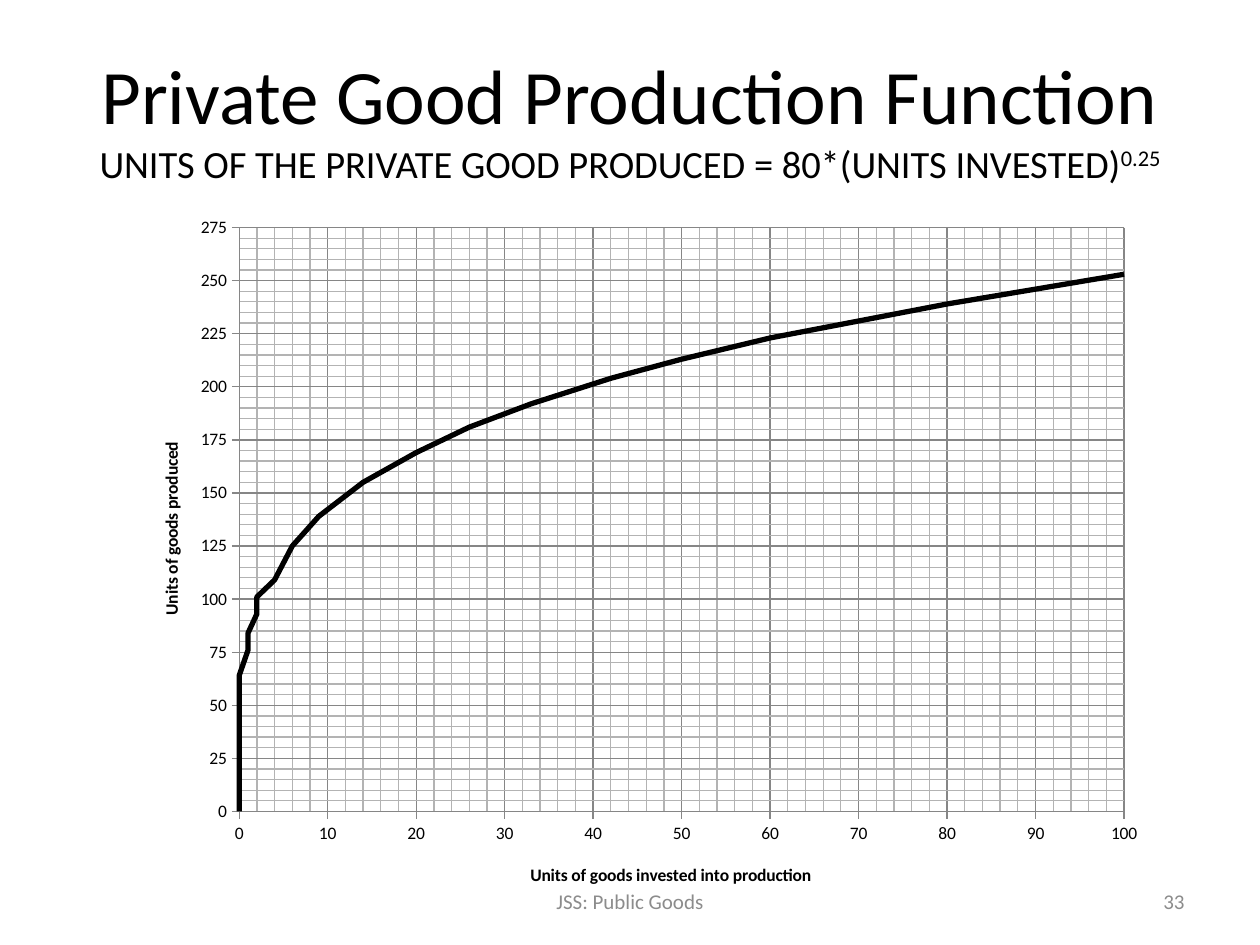
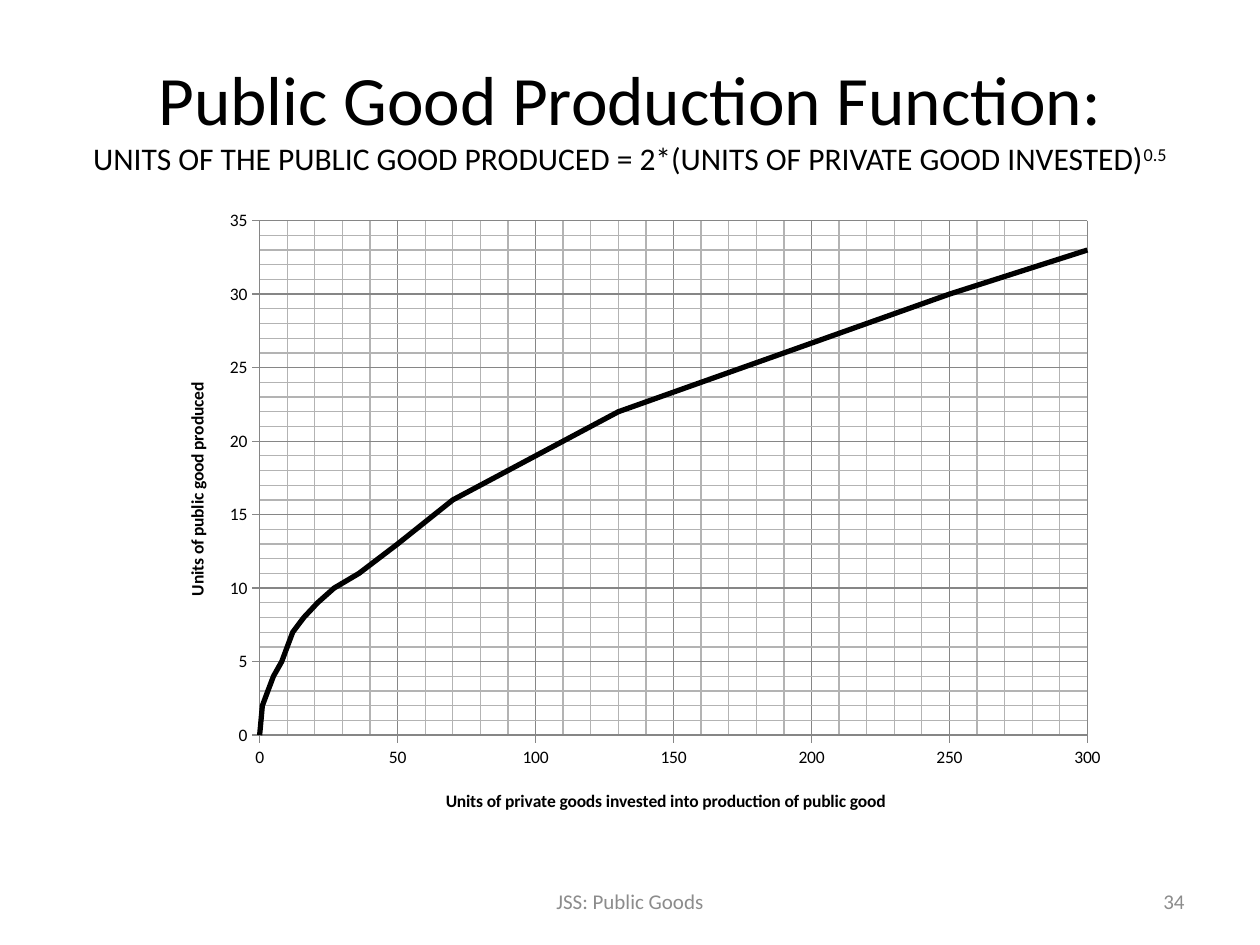
from lxml import etree
from pptx import Presentation
from pptx.chart.data import XyChartData
from pptx.dml.color import RGBColor
from pptx.enum.chart import XL_CHART_TYPE as ChartType, XL_TICK_MARK as TickMark
from pptx.enum.text import MSO_ANCHOR as Anchor, PP_ALIGN as Align
from pptx.oxml.ns import qn
from pptx.util import Inches, Pt

COLUMNS, ROWS = 120, 90  # grid over the whole slide
BLACK, FOOTER_GRAY = "000000", "8C8C8C"
MAJOR_GRAY, MINOR_GRAY = "868686", "B3B3B3"
GRID_WIDTH = Pt(0.75)
FONT = "Calibri"


def color(hex_string):
    return RGBColor.from_string(hex_string)


def place_in_chart(element, index, **shares):
    """Give a chart part a manual layout in shares of the chart."""
    layout = element.find(qn("c:layout"))
    if layout is None:
        layout = etree.Element(qn("c:layout"))
        element.insert(index, layout)
    manual = etree.SubElement(layout, qn("c:manualLayout"))
    if "w" in shares:
        etree.SubElement(manual, qn("c:layoutTarget"), val="inner")
    for side in "xy":
        etree.SubElement(manual, qn(f"c:{side}Mode"), val="edge")
    for name, share in shares.items():
        etree.SubElement(manual, qn(f"c:{name}"), val=str(share))


def color_minor_gridlines(axis, hex_string):
    gridlines = axis._element.find(qn("c:minorGridlines"))
    properties = etree.SubElement(gridlines, qn("c:spPr"))
    line = etree.SubElement(properties, qn("a:ln"), w=str(int(GRID_WIDTH)))
    fill = etree.SubElement(line, qn("a:solidFill"))
    etree.SubElement(fill, qn("a:srgbClr"), val=str(color(hex_string)))


class Deck:
    def __init__(self):
        self.presentation = Presentation()
        self.presentation.slide_width = Inches(10)
        self.presentation.slide_height = Inches(7.5)
        self.slide = None

    def box(self, column, row, columns, rows):
        width = self.presentation.slide_width / COLUMNS
        height = self.presentation.slide_height / ROWS
        return (round(column * width), round(row * height),
                round(columns * width), round(rows * height))

    def style(self, font, size, hex_string=BLACK, bold=None):
        font.name, font.size, font.bold = FONT, Pt(size), bold
        font.color.rgb = color(hex_string)

    def text(self, area, content, sizes, align, hex_string=BLACK):
        """Write a text whose lines have the given sizes."""
        text_frame = self.slide.shapes.add_textbox(*self.box(*area)).text_frame
        text_frame.word_wrap = True
        text_frame.vertical_anchor = Anchor.MIDDLE
        paragraph = text_frame.paragraphs[0]
        paragraph.text = content
        paragraph.alignment = align
        for run, size in zip(paragraph.runs, sizes):
            self.style(run.font, size, hex_string)
        return paragraph

    def title(self, heading, formula, exponent, sizes):
        paragraph = self.text((6, 3.6, 108, 15), f"{heading}\v{formula}", sizes, Align.CENTER)
        run = paragraph.add_run()
        run.text = exponent
        self.style(run.font, sizes[-1])
        run.font._element.set("baseline", "30000")

    def new_slide(self, number):
        layout = self.presentation.slide_layouts[6]
        self.slide = self.presentation.slides.add_slide(layout)
        # Footer and slide number
        self.text((41, 83.4, 38, 4.8), "JSS: Public Goods", [12], Align.CENTER, FOOTER_GRAY)
        self.text((86, 83.4, 28, 4.8), str(number), [12], Align.RIGHT, FOOTER_GRAY)

    def axis(self, axis, title, title_at, maximum, major):
        axis.minimum_scale, axis.maximum_scale = 0, maximum
        axis.major_unit, axis.minor_unit = major, major / 5
        axis.major_tick_mark, axis.minor_tick_mark = TickMark.OUTSIDE, TickMark.NONE
        axis.has_major_gridlines = axis.has_minor_gridlines = True
        for part in (axis, axis.major_gridlines):
            part.format.line.color.rgb = color(MAJOR_GRAY)
            part.format.line.width = GRID_WIDTH
        color_minor_gridlines(axis, MINOR_GRAY)
        axis.tick_labels.number_format = "0"
        axis.tick_labels.number_format_is_linked = False
        self.style(axis.tick_labels.font, 10)
        # Axis title
        text_frame = axis.axis_title.text_frame
        text_frame.text = title
        self.style(text_frame.paragraphs[0].runs[0].font, 10, bold=True)
        x, y = title_at
        place_in_chart(axis.axis_title._element, 1, x=x, y=y)

    def curve(self, area, points, plot_height, invested, produced):
        data = XyChartData()
        series_data = data.add_series("Series 1")
        for x, y in points:
            series_data.add_data_point(x, y)
        chart = self.slide.shapes.add_chart(
            ChartType.XY_SCATTER_LINES_NO_MARKERS, *self.box(*area), data).chart
        chart.has_legend = chart.has_title = False
        self.style(chart.font, 10)
        place_in_chart(chart._chartSpace.chart.plotArea, 0,
                       x=0.11, y=0.04, w=0.86, h=plot_height)
        self.axis(chart.category_axis, **invested)
        self.axis(chart.value_axis, **produced)
        chart.plots[0].vary_by_categories = False
        series = chart.plots[0].series[0]
        series.smooth = False
        series.format.line.color.rgb = color(BLACK)
        series.format.line.width = Pt(3)


def main():
    deck = Deck()

    # Private good
    deck.new_slide(33)
    deck.title("Private Good Production Function",
               "UNITS OF THE PRIVATE GOOD PRODUCED = 80*(UNITS INVESTED)",
               "0.25", (44, 22))
    private_invested = [0, 0, 1, 1, 2, 2, 4, 6, 9, 14, 20, 26, 33, 42, 50, 60, 70, 80, 100]
    private_produced = [0, 64, 76, 84, 93, 101, 109, 125, 139, 155,
                        169, 181, 192, 204, 213, 223, 231, 239, 253]
    deck.curve((12, 19, 98, 67), zip(private_invested, private_produced), 0.83,
               dict(title="Units of goods invested into production",
                    title_at=(0.39, 0.94), maximum=100, major=10),
               dict(title="Units of goods produced",
                    title_at=(0.03, 0.34), maximum=275, major=25))

    # Public good
    deck.new_slide(34)
    deck.title("Public Good Production Function:",
               "UNITS OF THE PUBLIC GOOD PRODUCED = 2*(UNITS OF PRIVATE GOOD INVESTED)",
               "0.5", (39.6, 18))
    public_invested = [0, 1, 3, 5, 8, 12, 16, 21, 27, 36, 50, 70,
                       100, 130, 160, 190, 220, 250, 300]
    public_produced = [0, 2, 3, 4, 5, 7, 8, 9, 10, 11, 13, 16, 19, 22, 24, 26, 28, 30, 33]
    deck.curve((14.64, 18.6, 91.68, 60.5), zip(public_invested, public_produced), 0.81,
               dict(title="Units of private goods invested into production of public good",
                    title_at=(0.3, 0.93), maximum=300, major=50),
               dict(title="Units of public good produced",
                    title_at=(0.03, 0.29), maximum=35, major=5))

    deck.presentation.save("out.pptx")


if __name__ == "__main__":
    main()
